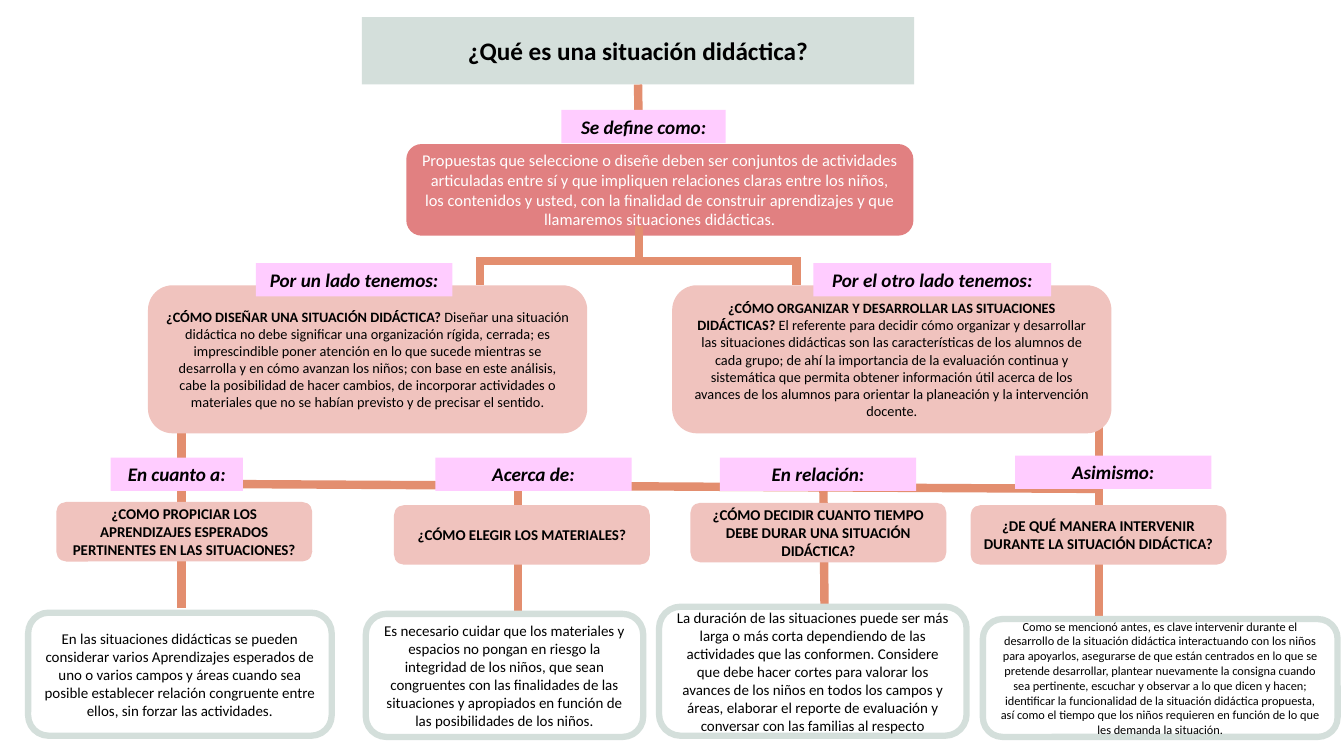
"""Builds a concept map slide about didactic situations."""
from lxml import etree
from pptx import Presentation
from pptx import util as u
from pptx.dml.color import RGBColor
from pptx.enum import shapes, text
from pptx.oxml.ns import qn

FONT = "Calibri"
BLACK = RGBColor(0x00, 0x00, 0x00)
WHITE = RGBColor(0xFF, 0xFF, 0xFF)
SAGE = RGBColor(0xD4, 0xDF, 0xDB)
CORAL = RGBColor(0xE1, 0x80, 0x81)
BLUSH = RGBColor(0xF0, 0xC3, 0xBE)
PINK = RGBColor(0xFF, 0xCC, 0xFF)
ORANGE = RGBColor(0xE3, 0x8E, 0x6F)
RECT = shapes.MSO_SHAPE.RECTANGLE
ROUND = shapes.MSO_SHAPE.ROUNDED_RECTANGLE

TITLE = "¿Qué es una situación didáctica?"
DEFINITION = (
    "Propuestas que seleccione o diseñe deben ser conjuntos de actividades "
    "articuladas entre sí y que impliquen relaciones claras entre los niños, "
    "los contenidos y usted, con la finalidad de construir aprendizajes y que "
    "llamaremos situaciones didácticas.")

BRANCHES = [
    (3.73, "¿CÓMO DISEÑAR UNA SITUACIÓN DIDÁCTICA? ",
     "Diseñar una situación didáctica no debe significar una organización "
     "rígida, cerrada; es imprescindible poner atención en lo que sucede "
     "mientras se desarrolla y en cómo avanzan los niños; con base en este "
     "análisis, cabe la posibilidad de hacer cambios, de incorporar "
     "actividades o materiales que no se habían previsto y de precisar el "
     "sentido."),
    (16.94, "¿CÓMO ORGANIZAR Y DESARROLLAR LAS SITUACIONES DIDÁCTICAS? ",
     "El referente para decidir cómo organizar y desarrollar las situaciones "
     "didácticas son las características de los alumnos de cada grupo; de ahí "
     "la importancia de la evaluación continua y sistemática que permita "
     "obtener información útil acerca de los avances de los alumnos para "
     "orientar la planeación y la intervención docente."),
]

QUESTIONS = [
    (1.42, 12.65, "¿COMO PROPICIAR LOS APRENDIZAJES ESPERADOS PERTINENTES EN "
     "LAS SITUACIONES?"),
    (9.93, 12.73, "¿CÓMO ELEGIR LOS MATERIALES?"),
    (17.4, 12.67, "¿CÓMO DECIDIR CUANTO TIEMPO DEBE DURAR UNA SITUACIÓN "
     "DIDÁCTICA?"),
    (24.46, 12.73, "¿DE QUÉ MANERA INTERVENIR DURANTE LA SITUACIÓN DIDÁCTICA?"),
]

ANSWERS = [
    ((0.71, 15.44, 7.65, 3.1), 10.7,
     "En las situaciones didácticas se pueden considerar varios Aprendizajes "
     "esperados de uno o varios campos y áreas cuando sea posible establecer "
     "relación congruente entre ellos, sin forzar las actividades."),
    ((9.22, 15.47, 6.99, 3.1), 10.7,
     "Es necesario cuidar que los materiales y espacios no pongan en riesgo "
     "la integridad de los niños, que sean congruentes con las finalidades de "
     "las situaciones y apropiados en función de las posibilidades de los "
     "niños."),
    ((16.61, 15.29, 7.75, 3.25), 10.7,
     "La duración de las situaciones puede ser más larga o más corta "
     "dependiendo de las actividades que las conformen. Considere que debe "
     "hacer cortes para valorar los avances de los niños en todos los campos "
     "y áreas, elaborar el reporte de evaluación y conversar con las familias "
     "al respecto"),
    ((24.77, 15.6, 8.94, 2.97), 8.8,
     "Como se mencionó antes, es clave intervenir durante el desarrollo de la "
     "situación didáctica interactuando con los niños para apoyarlos, "
     "asegurarse de que están centrados en lo que se pretende desarrollar, "
     "plantear nuevamente la consigna cuando sea pertinente, escuchar y "
     "observar a lo que dicen y hacen; identificar la funcionalidad de la "
     "situación didáctica propuesta, así como el tiempo que los niños "
     "requieren en función de lo que les demanda la situación."),
]

LABELS = [
    (14.15, 2.77, 4.14, "Se define como:"),
    (6.45, 6.63, 4.95, "Por un lado tenemos:"),
    (20.5, 6.63, 5.99, "Por el otro lado tenemos:"),
    (2.79, 11.53, 3.33, "En cuanto a:"),
    (10.97, 11.53, 4.95, "Acerca de:"),
    (18.14, 11.53, 4.95, "En relación:"),
    (25.58, 11.48, 4.95, "Asimismo:"),
]

LINKS = [
    (16.1, 5.69, 16.1, 6.48),
    (12.12, 6.58, 20.07, 6.58),
    (12.09, 6.48, 12.09, 7.19),
    (20.07, 6.48, 20.07, 7.19),
    (4.57, 10.92, 4.57, 12.83),
    (4.57, 13.56, 4.57, 15.32),
    (4.45, 12.19, 27.69, 12.32),
    (13.06, 12.14, 13.06, 14.15),
    (13.06, 13.84, 13.06, 15.6),
    (20.75, 12.22, 20.78, 15.47),
    (27.69, 9.96, 27.69, 12.95),
    (27.69, 12.4, 27.69, 15.62),
]


def add_link(s, x1, y1, x2, y2):
    """Draw one thick straight connector and return it."""
    cx = s.shapes.add_connector(shapes.MSO_CONNECTOR.STRAIGHT,
                                *map(u.Cm, (x1, y1, x2, y2)))
    cx.line.color.rgb = ORANGE
    cx.line.width = u.Pt(6)
    etree.SubElement(cx._element.spPr, qn("a:effectLst"))
    return cx


def add_run(p, words, size, color=BLACK, bold=False, italic=False):
    """Append a formatted run to a paragraph."""
    r = p.add_run()
    r.text = words
    r.font.name = FONT
    r.font.size = u.Pt(size)
    r.font.color.rgb = color
    r.font.bold = bold
    r.font.italic = italic


def add_box(s, kind, box, fill, border=None):
    """Draw a filled shape and return it with its centred paragraph."""
    sp = s.shapes.add_shape(kind, *map(u.Cm, box))
    sp.shadow.inherit = False
    sp.fill.solid()
    sp.fill.fore_color.rgb = fill
    if border is None:
        sp.line.fill.background()
    else:
        sp.line.color.rgb = border
        sp.line.width = u.Pt(4.5)
    tf = sp.text_frame
    tf.word_wrap = True
    tf.vertical_anchor = text.MSO_ANCHOR.MIDDLE
    p = tf.paragraphs[0]
    p.alignment = text.PP_ALIGN.CENTER
    return sp, p


def add_label(s, left, top, width, words):
    """Draw a pink linking label."""
    sp, p = add_box(s, RECT, (left, top, width, 0.84), PINK)
    sp.text_frame.vertical_anchor = text.MSO_ANCHOR.TOP
    sp.text_frame.auto_size = text.MSO_AUTO_SIZE.SHAPE_TO_FIT_TEXT
    add_run(p, words, 13.7, bold=True, italic=True)


def main():
    """Build the slide and save it."""
    prs = Presentation()
    prs.slide_width, prs.slide_height = u.Cm(33.87), u.Cm(19.05)
    s = prs.slides.add_slide(prs.slide_layouts[6])

    title, p = add_box(s, RECT, (9.12, 0.43, 13.92, 1.7), SAGE)
    add_run(p, TITLE, 18, bold=True)
    add_link(s, 16.08, 2.13, 16.1, 3.48).begin_connect(title, 2)
    _, p = add_box(s, ROUND, (10.24, 3.63, 12.78, 2.31), CORAL)
    add_run(p, DEFINITION, 11.7, WHITE)

    for link in LINKS:
        add_link(s, *link)
    for left, question, answer in BRANCHES:
        _, p = add_box(s, ROUND, (left, 7.19, 11.07, 3.73), BLUSH)
        add_run(p, question, 10.2, bold=True)
        add_run(p, answer, 10.2)
    for left, top, question in QUESTIONS:
        _, p = add_box(s, ROUND, (left, top, 6.45, 1.5), BLUSH)
        add_run(p, question, 10.7, bold=True)
    for box, size, answer in ANSWERS:
        _, p = add_box(s, ROUND, box, WHITE, SAGE)
        add_run(p, answer, size)
    for label in LABELS:
        add_label(s, *label)

    prs.save("out.pptx")


if __name__ == "__main__":
    main()
